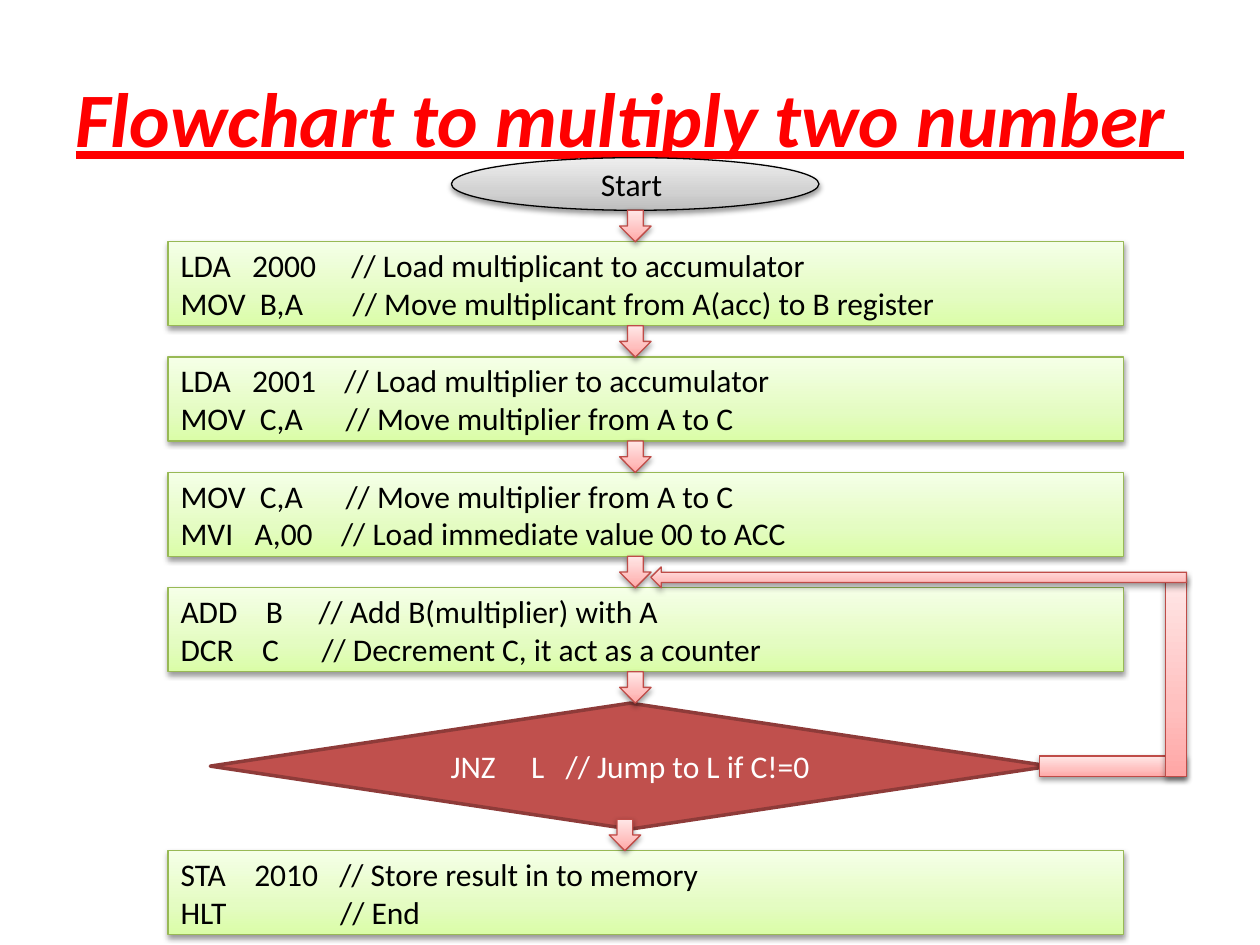
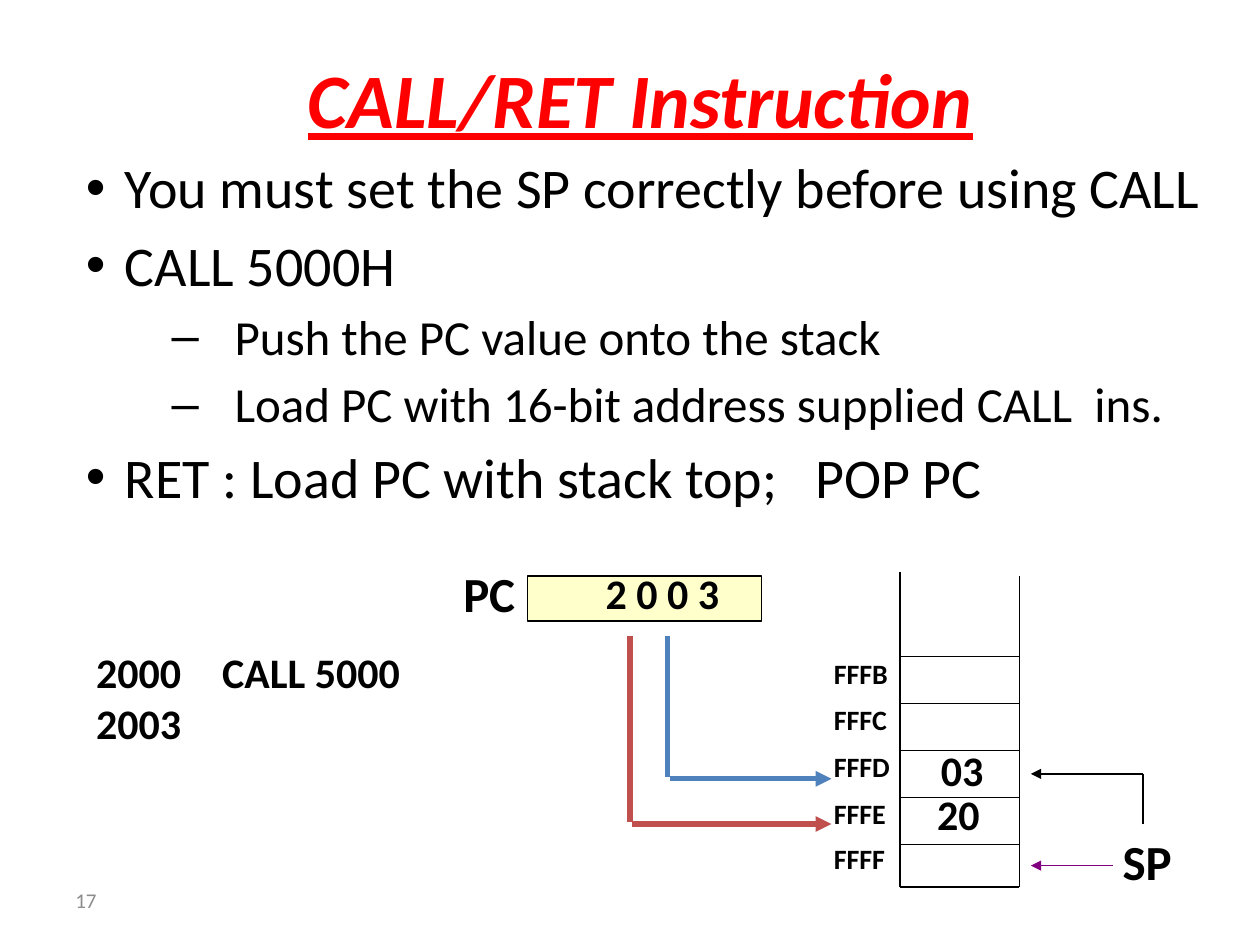
from copy import deepcopy

from pptx import Presentation
from pptx import util as u
from pptx.dml.color import RGBColor
from pptx.enum import shapes, text
from pptx.oxml import parse_xml
from pptx.oxml.ns import nsdecls, qn

Cm, Pt = u.Cm, u.Pt
MSO = shapes.MSO_SHAPE
MIDDLE, TOP = text.MSO_ANCHOR.MIDDLE, text.MSO_ANCHOR.TOP
CENTER, LEFT = text.PP_ALIGN.CENTER, text.PP_ALIGN.LEFT

FONT = "Calibri"
BLACK, RED, BLUE, PURPLE = "000000", "C0504D", "4F81BD", "800080"
TITLE = dict(size=Pt(44), bold=True, italic=True, underline=True)

# Gradient stops from bottom to top, then the outline
GRAY = (("BDBDBD", "D1D1D1", "EEEEEE"), BLACK)
GREEN = (("DAFDA7", "E4FCC2", "F5FFE7"), "98B955")
PINK = (("FFA6A5", "FFC0BF", "FFE7E7"), "BF4C48")


def rgb(value):
    return RGBColor.from_string(value)


def write(tf, lines, color=BLACK, align=LEFT, anchor=TOP, wrap=True, **fmt):
    tf.word_wrap, tf.vertical_anchor = wrap, anchor
    for i, line in enumerate(lines):
        p = tf.add_paragraph() if i else tf.paragraphs[0]
        p.alignment = align
        r = p.add_run()
        r.text = line
        r.font.name = FONT
        r.font.color.rgb = rgb(color)
        for key, value in fmt.items():
            setattr(r.font, key, value)


def add_text(s, box, *lines, **fmt):
    tf = s.shapes.add_textbox(*map(Cm, box)).text_frame
    write(tf, lines, **fmt)
    return tf


def add_title(s, box, title):
    add_text(s, box, title, color="FF0000", align=CENTER, anchor=MIDDLE, **TITLE)


def add_shape(s, kind, box, fill, line, width=0.75):
    sp = s.shapes.add_shape(kind, *map(Cm, box))
    sp.shadow.inherit = False
    sp.fill.solid()
    sp.fill.fore_color.rgb = rgb(fill)
    sp.line.color.rgb = rgb(line)
    sp.line.width = Pt(width)
    return sp


def add_glossy(s, kind, box, look):
    """Shape with a three-stop vertical gradient and a soft shadow."""
    colors, line = look
    sp = add_shape(s, kind, box, colors[0], line)
    sp.fill.gradient()
    sp.fill.gradient_angle = 90
    spPr = sp._element.spPr
    stops = spPr.find(".//" + qn("a:gsLst"))
    stops.insert(1, deepcopy(stops[0]))
    for stop, pos, color in zip(sp.fill.gradient_stops, (0, 0.35, 1), colors):
        stop.position = pos
        stop.color.rgb = rgb(color)
    spPr.find(qn("a:effectLst")).append(parse_xml(
        f'<a:outerShdw {nsdecls("a")} blurRad="40000" dist="20000" dir="5400000" '
        'rotWithShape="0"><a:srgbClr val="000000"><a:alpha val="38000"/></a:srgbClr>'
        '</a:outerShdw>'))
    return sp


def add_line(s, x1, y1, x2, y2, color=BLACK, width=0.75, arrow=False):
    c = s.shapes.add_connector(shapes.MSO_CONNECTOR.STRAIGHT, *map(Cm, (x1, y1, x2, y2)))
    c.line.color.rgb = rgb(color)
    c.line.width = Pt(width)
    if arrow:
        c.line._get_or_add_ln().append(
            parse_xml(f'<a:tailEnd {nsdecls("a")} type="triangle"/>'))
    c._element.spPr.append(parse_xml(f'<a:effectLst {nsdecls("a")}/>'))


# ---- Flowchart slide ----
STEPS = [
    ("LDA   2000     // Load multiplicant to accumulator",
     "MOV  B,A       // Move multiplicant from A(acc) to B register"),
    ("LDA   2001    // Load multiplier to accumulator",
     "MOV  C,A      // Move multiplier from A to C"),
    ("MOV  C,A      // Move multiplier from A to C",
     "MVI   A,00    // Load immediate value 00 to ACC"),
    ("ADD    B     // Add B(multiplier) with A",
     "DCR    C      // Decrement C, it act as a counter"),
]
STORE = ("STA    2010   // Store result in to memory", "HLT                // End")
STEP_H, ARROW = 1.69, 0.635


def add_step(s, left, top, lines):
    sp = add_glossy(s, MSO.RECTANGLE, (left, top, 19.26, STEP_H), GREEN)
    write(sp.text_frame, lines, anchor=MIDDLE, size=Pt(18))


def add_down_arrow(s, left, top):
    add_glossy(s, MSO.DOWN_ARROW, (left, top, ARROW, ARROW), PINK)


def add_flow(s, left, top):
    arrow_x = left + 9.1
    sp = add_glossy(s, MSO.OVAL, (left + 5.71, top, 7.41, 1.06), GRAY)
    write(sp.text_frame, ["Start "], align=CENTER, anchor=MIDDLE, size=Pt(18))

    # Each step hangs below its arrow
    y = top + 1.06
    for lines in STEPS:
        add_step(s, left, y + ARROW, lines)
        add_down_arrow(s, arrow_x, y)
        y += ARROW + STEP_H

    # Decision, then the closing step
    sp = add_shape(s, MSO.DIAMOND, (left + 0.85, y + ARROW, 16.93, 2.54), RED, "8E3B39", 2)
    write(sp.text_frame, ["JNZ     L   // Jump to L if C!=0"], color="FFFFFF",
          align=CENTER, anchor=MIDDLE, size=Pt(18))
    add_down_arrow(s, arrow_x, y)
    add_step(s, left, top + 13.97, STORE)
    add_down_arrow(s, arrow_x - 0.21, top + 13.97 - ARROW)


def add_loop_back(s, left, top, width, height):
    """Path from the decision back to the ADD step."""
    bar = 0.42
    right = left + width
    add_glossy(s, MSO.RECTANGLE, (right - 2.96, top + height - bar, 2.96, bar), PINK)
    add_glossy(s, MSO.RECTANGLE, (right - bar, top + 0.21, bar, height - 0.21), PINK)
    add_glossy(s, MSO.LEFT_ARROW, (left, top, width, bar), PINK)


def flowchart_slide(s):
    add_title(s, (1.27, 0.76, 22.86, 3.18), "Flowchart to multiply two number ")
    add_flow(s, 3.39, 3.18)
    add_loop_back(s, 13.12, 11.43, 10.8, 4.23)


# ---- CALL/RET slide ----
# Bullet sign, size, margin, hanging indent
POINT = ("•", 32, 0.79, 0.79)
SUB = ("–", 28, 3.0, 1.27)
BULLETS = [
    (POINT, "You must set the SP correctly before using CALL"),
    (POINT, "CALL 5000H"),
    (SUB, "Push the PC value onto the stack"),
    (SUB, "Load PC with 16-bit address supplied CALL  ins."),
    (POINT, "RET : Load PC with stack top;   POP PC"),
]


def add_bullets(s, box):
    tf = add_text(s, box, *(line for _, line in BULLETS))
    for p, ((sign, size, margin, hang), _) in zip(tf.paragraphs, BULLETS):
        p.runs[0].font.size = Pt(size)
        p.space_before = Pt(size * 0.18)
        pPr = p._p.get_or_add_pPr()
        pPr.set("marL", str(Cm(margin)))
        pPr.set("indent", str(-Cm(hang)))
        pPr.append(parse_xml(f'<a:buFont {nsdecls("a")} typeface="Arial"/>'))
        pPr.append(parse_xml(f'<a:buChar {nsdecls("a")} char="{sign}"/>'))


def add_label(s, left, top, width, height, line, size, anchor=TOP):
    add_text(s, (left, top, width, height), line, size=Pt(size), bold=True,
             wrap=False, anchor=anchor)


def add_memory(s, left, top, width, height):
    right, bottom = left + width, top + height
    rows = [top + 1.71 + 0.945 * i for i in range(5)] + [bottom]
    add_line(s, left, top, left, bottom)
    add_line(s, right, bottom, right, top + 0.08)
    for y in rows:
        add_line(s, left, y, right, y)

    # Addresses beside the cells
    names = ("FFFB", "FFFC", "FFFD", "FFFE", "FFFF")
    for name, y1, y2 in zip(names, rows, rows[1:]):
        add_label(s, left - 1.58, (y1 + y2) / 2 - 0.61, 1.65, 0.89, name, 16)

    # Pushed bytes
    add_label(s, left + 0.58, top + 3.4, 1.4, 1.19, "03", 24, MIDDLE)
    add_label(s, left + 0.5, top + 4.27, 1.4, 1.19, "20", 24, MIDDLE)


def add_counter(s, left, top):
    """Program counter with the paths of its two bytes to memory."""
    add_shape(s, MSO.RECTANGLE, (left, top, 4.72, 0.91), "FFFFCC", BLACK)
    add_label(s, left - 1.55, top - 0.38, 1.6, 1.37, "PC", 28)
    add_label(s, left + 1.32, top - 0.25, 2.87, 1.19, "2 0 0 3", 24, MIDDLE)
    for x, drop, color in ((2.06, 5.0, RED), (2.82, 4.09, BLUE)):
        add_line(s, left + x, top + 1.22, left + x, top + drop - 0.04, color, 3)
        add_line(s, left + x + 0.05, top + drop, left + 6.12, top + drop, color, 3, True)


def add_stack_pointer(s, left, top):
    """SP with its old and its new target."""
    corner = left + 2.26
    add_line(s, corner, top + 1.02, corner, top)
    add_line(s, corner, top, left, top, arrow=True)
    add_line(s, left + 1.65, top + 1.85, left, top + 1.85, PURPLE, arrow=True)
    add_label(s, left + 1.6, top + 1.04, 1.55, 1.37, "SP", 28)


def call_ret_slide(s):
    add_text(s, (1.27, 17.65, 5.93, 1.01), "17", color="8C8C8C", anchor=MIDDLE, size=Pt(12))
    add_title(s, (1.48, 0.64, 22.86, 2.67), "CALL/RET Instruction")
    add_bullets(s, (1.48, 2.96, 23.5, 12.57))
    add_memory(s, 18.14, 11.53, 2.41, 6.35)
    add_counter(s, 10.64, 11.61)
    add_stack_pointer(s, 20.78, 15.6)
    add_text(s, (1.69, 12.9, 7.2, 2.31), "2000\tCALL 5000", "2003",
             anchor=MIDDLE, size=Pt(24), bold=True)


def main():
    prs = Presentation()
    prs.slide_width, prs.slide_height = Cm(25.4), Cm(19.05)
    for build in (flowchart_slide, call_ret_slide):
        build(prs.slides.add_slide(prs.slide_layouts[6]))
    prs.save("out.pptx")


if __name__ == "__main__":
    main()
